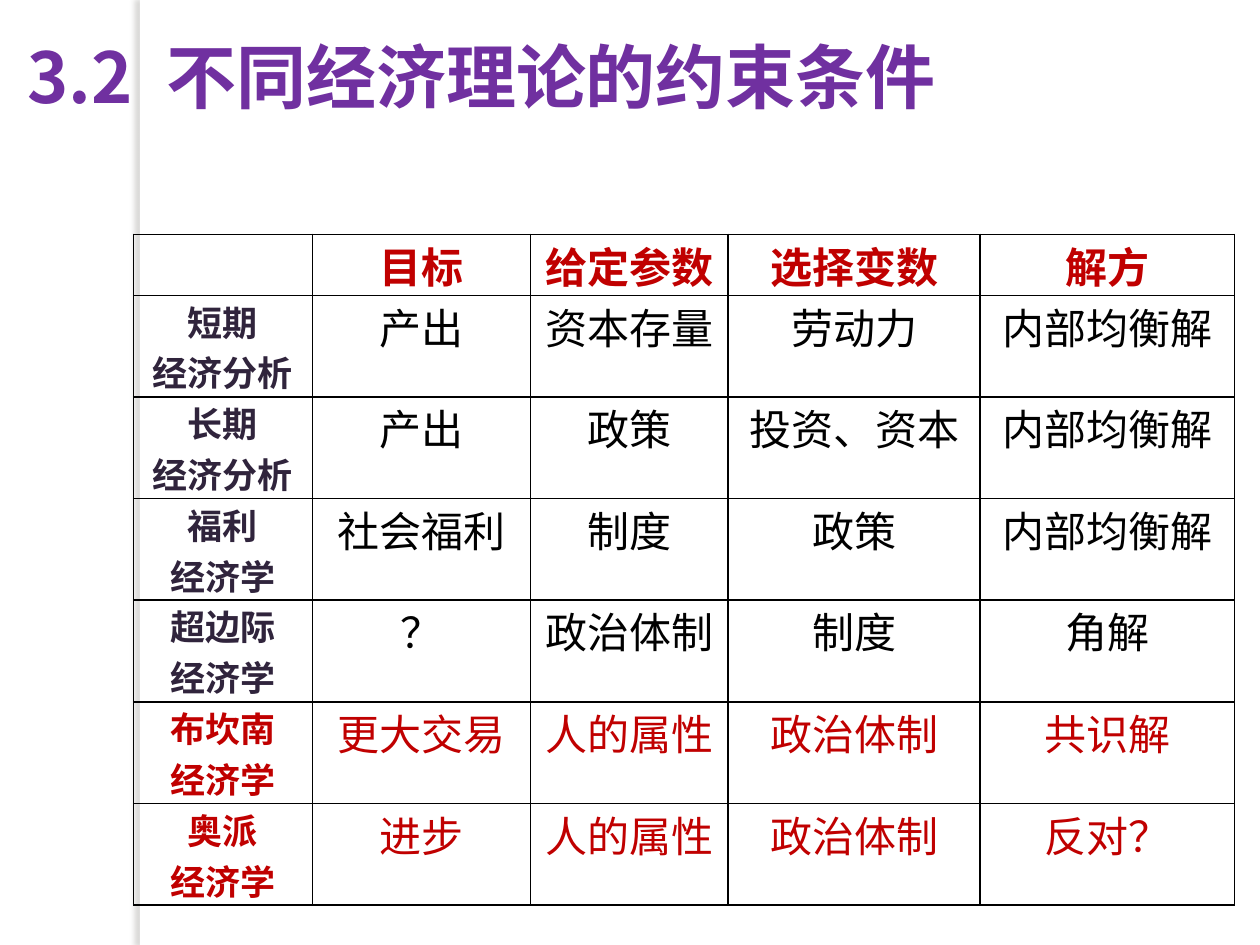
"""Build a slide with a table of the constraints in different economic theories."""
from lxml.etree import SubElement
from pptx import Presentation
from pptx.dml.color import RGBColor
from pptx.enum.shapes import MSO_SHAPE
from pptx.enum.text import MSO_ANCHOR, MSO_AUTO_SIZE, PP_ALIGN
from pptx.oxml.ns import qn
from pptx.util import Inches, Pt

TITLE = ("3.2", " ", "不同经济理论的约束条件")
HEADS = ("", "目标", "给定参数", "选择变数", "解方")
ROWS = [
    ("短期\n经济分析", "产出", "资本存量", "劳动力", "内部均衡解"),
    ("长期\n经济分析", "产出", "政策", "投资、资本", "内部均衡解"),
    ("福利\n经济学", "社会福利", "制度", "政策", "内部均衡解"),
    ("超边际\n经济学", "？", "政治体制", "制度", "角解"),
    ("布坎南\n经济学", "更大交易", "人的属性", "政治体制", "共识解"),
    ("奥派\n经济学", "进步", "人的属性", "政治体制", "反对？"),
]
RED_FROM = 5
WIDTHS = (1.42, 1.73, 1.57, 2, 2.02)
HEIGHTS = (0.48, 0.5, 0.54, 0.62, 0.62, 0.73, 0.65)
FONT = "Noto Sans CJK SC"
COLORS = {"white": "FFFFFF", "black": "000000", "purple": "7030A0",
          "red": "C00000", "dark": "30243C", "shade": "716E67"}


def write(para, text, size=24, color="black", bold=False, align=PP_ALIGN.CENTER):
    para.alignment = align
    run = para.add_run()
    run.text = text
    font = run.font
    font.name, font.size, font.bold = FONT, Pt(size), bold
    font.color.rgb = RGBColor.from_string(COLORS[color])
    SubElement(run._r.get_or_add_rPr(), qn("a:ea"), typeface=FONT)
    return run


def add_title(slide):
    title = slide.shapes.title
    title.left, title.top = Inches(0.12), Inches(0.29)
    title.width, title.height = Inches(8.18), Inches(1.02)
    frame = title.text_frame
    frame.auto_size = MSO_AUTO_SIZE.NONE
    frame.vertical_anchor = MSO_ANCHOR.TOP
    para = frame.paragraphs[0]
    para.line_spacing = 0.9
    runs = [write(para, part, size=40, color="purple", bold=True,
                  align=PP_ALIGN.LEFT) for part in TITLE]
    runs[1]._r.get_or_add_rPr().set("spc", "1000")
    return title


def add_strip(slide, title):
    strip = slide.shapes.add_shape(MSO_SHAPE.RECTANGLE, Inches(1.11), 0,
                                   Inches(0.08), Inches(7.5))
    strip.fill.solid()
    strip.fill.fore_color.rgb = RGBColor.from_string(COLORS["white"])
    strip.line.fill.background()
    strip.shadow.inherit = False
    glow = SubElement(strip.element.spPr.find(qn("a:effectLst")),
                      qn("a:outerShdw"), blurRad=str(Pt(3)), dist=str(Pt(3)),
                      dir="10800000", algn="tl", rotWithShape="0")
    tint = SubElement(glow, qn("a:srgbClr"), val=COLORS["shade"])
    SubElement(tint, qn("a:alpha"), val="25000")
    title.element.addprevious(strip.element)


def style_cell(cell):
    cell.margin_left = cell.margin_right = Inches(0.07)
    cell.margin_top = cell.margin_bottom = 0
    cell.vertical_anchor = MSO_ANCHOR.TOP
    props = cell._tc.get_or_add_tcPr()
    for side in ("lnL", "lnR", "lnT", "lnB"):
        edge = SubElement(props, qn("a:" + side), w=str(Pt(1)))
        fill = SubElement(edge, qn("a:solidFill"))
        SubElement(fill, qn("a:srgbClr"), val=COLORS["black"])
    cell.fill.background()


def add_grid(slide):
    data = [HEADS, *ROWS]
    frame = slide.shapes.add_table(len(data), len(HEADS), Inches(1.06),
                                   Inches(1.86), Inches(8.74), Inches(4.54))
    table = frame.table
    table.first_row = table.horz_banding = False
    for col, width in zip(table.columns, WIDTHS):
        col.width = Inches(width)
    for row, height in zip(table.rows, HEIGHTS):
        row.height = Inches(height)
    frame.height = Inches(4.54)
    for r, texts in enumerate(data):
        for c, text in enumerate(texts):
            cell = table.cell(r, c)
            style_cell(cell)
            if not text:
                continue
            label = r > 0 and c == 0
            red = r == 0 or r >= RED_FROM
            color = "red" if red else "dark" if label else "black"
            body = cell.text_frame
            for n, line in enumerate(text.split("\n")):
                para = body.add_paragraph() if n else body.paragraphs[0]
                write(para, line, size=20 if label else 24, color=color,
                      bold=label or r == 0)


def main():
    deck = Presentation()
    deck.slide_width, deck.slide_height = Inches(10), Inches(7.5)
    slide = deck.slides.add_slide(deck.slide_layouts[5])
    title = add_title(slide)
    add_strip(slide, title)
    add_grid(slide)
    deck.save("out.pptx")


if __name__ == "__main__":
    main()
